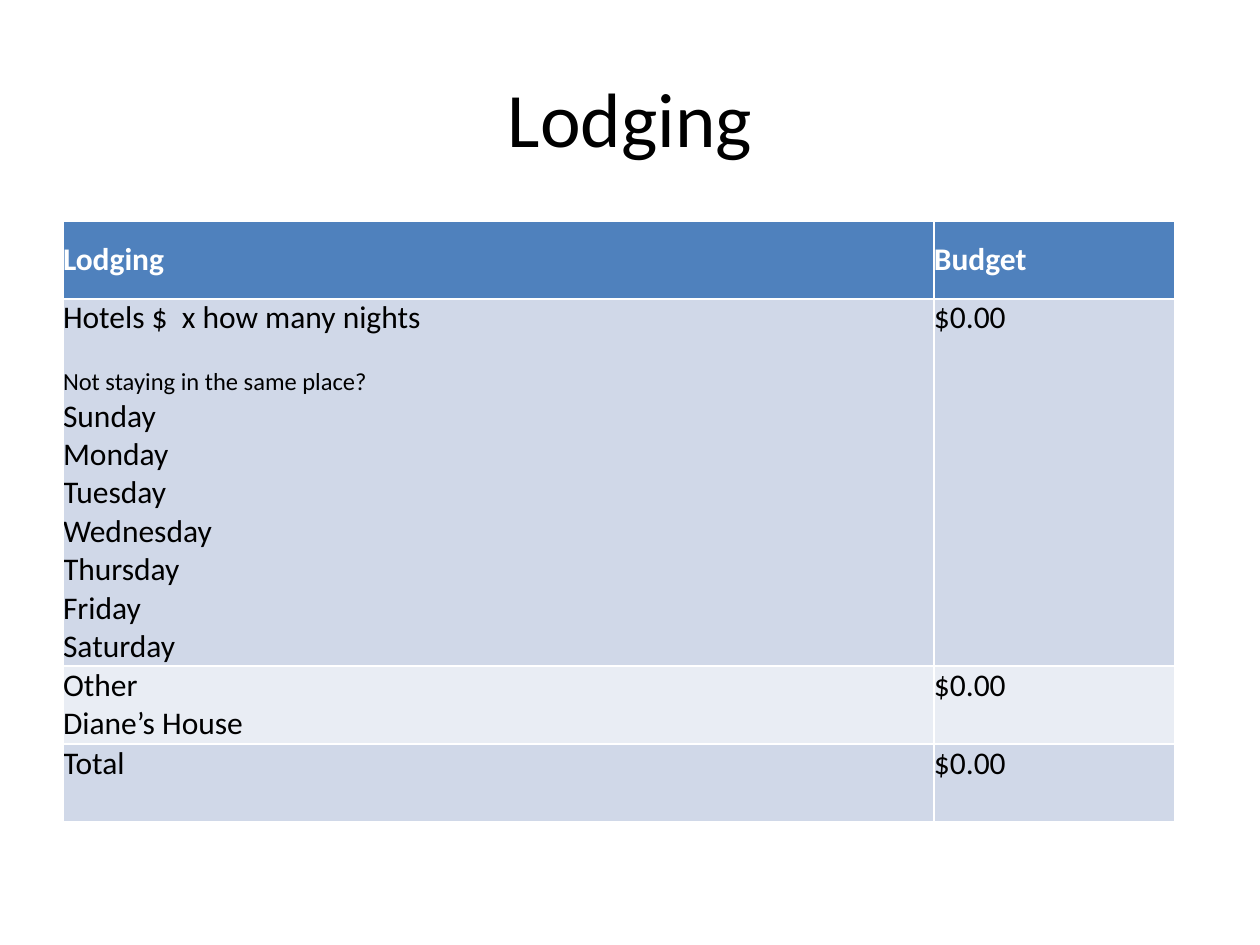
from pptx import Presentation
from pptx.dml.color import RGBColor
from pptx.enum.text import MSO_ANCHOR, PP_ALIGN
from pptx.util import Emu, Pt

EMU_PER_PX = 914400 / 126


def px(length):
    return Emu(round(length * EMU_PER_PX))


def style(paragraph, size, color, bold=False):
    for run in paragraph.runs:
        run.font.name = "Calibri"
        run.font.size = Pt(size)
        run.font.bold = bold
        run.font.color.rgb = RGBColor.from_string(color)


presentation = Presentation()
presentation.slide_width, presentation.slide_height = px(1260), px(945)
slide = presentation.slides.add_slide(presentation.slide_layouts[5])

# Title
title = slide.shapes.title
title.left, title.top, title.width, title.height = px(63), px(38), px(1134), px(158)
title.text_frame.text = "Lodging"
title.text_frame.vertical_anchor = MSO_ANCHOR.MIDDLE
title.text_frame.paragraphs[0].alignment = PP_ALIGN.CENTER
style(title.text_frame.paragraphs[0], 44, "000000")

# Budget table: the default table style supplies the white rules
QUESTION = "Not staying in the same place?"
DAYS = ["Sunday", "Monday", "Tuesday", "Wednesday", "Thursday", "Friday", "Saturday"]
rows = [
    (78, "4F81BD", ["Lodging"], "Budget"),
    (367, "D0D8E8", ["Hotels $  x how many nights", QUESTION, *DAYS], "$0.00"),
    (78, "E9EDF4", ["Other", "Diane’s House"], "$0.00"),
    (78, "D0D8E8", ["Total"], "$0.00"),
]
column_widths = [871, 241]
table = slide.shapes.add_table(
    len(rows), len(column_widths), px(63), px(221),
    px(sum(column_widths)), px(sum(row[0] for row in rows)),
).table
for column, width in zip(table.columns, column_widths):
    column.width = px(width)

for row_index, (height, fill, items, budget) in enumerate(rows):
    table.rows[row_index].height = px(height)
    is_header = row_index == 0
    for column_index, lines in enumerate([items, [budget]]):
        cell = table.cell(row_index, column_index)
        cell.margin_left = cell.margin_right = cell.margin_top = cell.margin_bottom = 0
        cell.vertical_anchor = MSO_ANCHOR.MIDDLE if is_header else MSO_ANCHOR.TOP
        cell.fill.solid()
        cell.fill.fore_color.rgb = RGBColor.from_string(fill)
        cell.text_frame.text = "\n".join(lines)
        for paragraph in cell.text_frame.paragraphs:
            is_question = paragraph.text == QUESTION
            if is_question:
                paragraph.space_before = Pt(17)
            style(paragraph, 14 if is_question else 18,
                  "FFFFFF" if is_header else "000000", is_header)

presentation.save("out.pptx")
